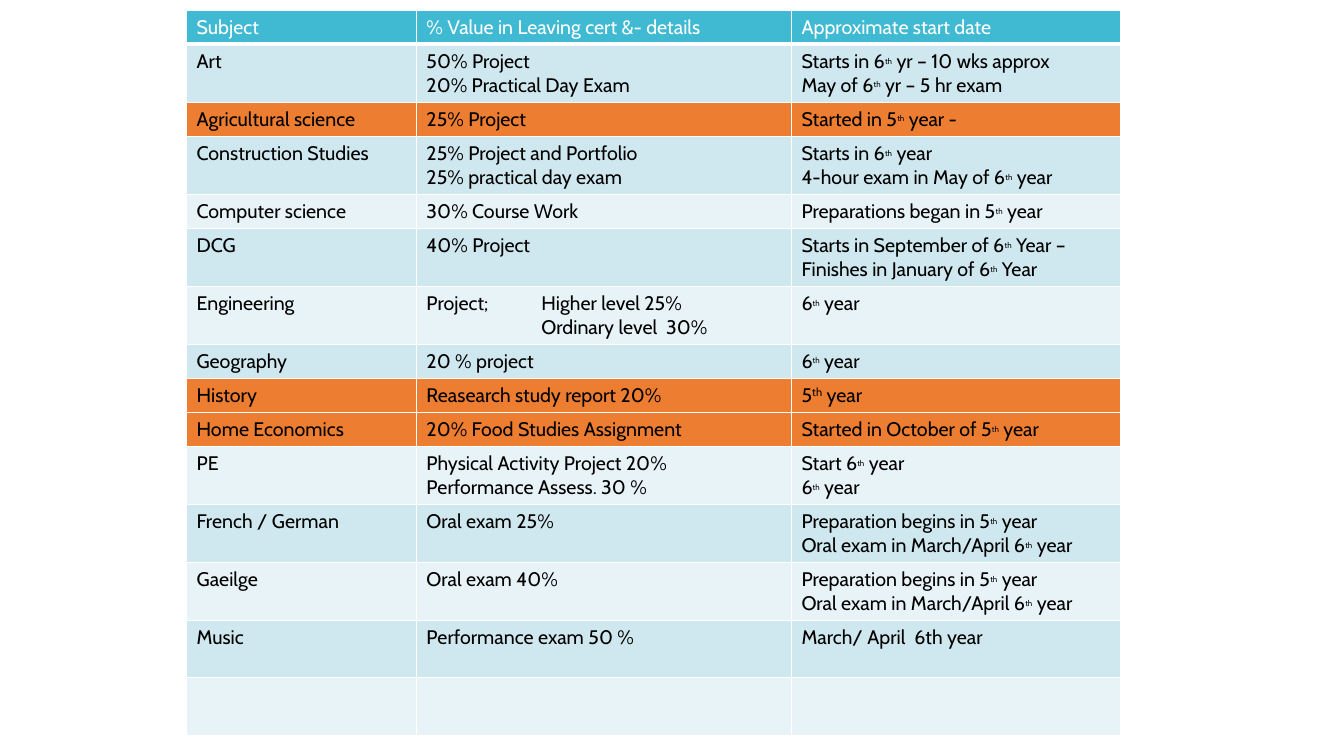
from lxml import etree
from pptx import Presentation
from pptx.dml.color import RGBColor
from pptx.oxml.ns import qn
from pptx.util import Inches, Pt

HEAD = ("Subject", "% Value in Leaving cert &- details", "Approximate start date")
ROWS = [
    (2, "", "Art", "50% Project\n20% Practical Day Exam",
     "Starts in 6^th^ yr – 10 wks approx\nMay of 6^th^ yr – 5 hr exam"),
    (1, "mark", "Agricultural science", "25% Project", "Started in 5^th^ year -"),
    (2, "", "Construction Studies", "25% Project and Portfolio\n25% practical day exam",
     "Starts in 6^th^ year\n4-hour exam in May of 6^th^ year"),
    (1, "", "Computer science", "30% Course Work", "Preparations began in 5^th^ year"),
    (2, "", "DCG", "40% Project",
     "Starts in September of 6^th^ Year – Finishes in January of 6^th^ Year"),
    (2, "", "Engineering", "Project;\tHigher level 25%\n\tOrdinary level  30%", "6^th^ year"),
    (1, "", "Geography", "20 % project", "6^th^ year"),
    (1, "mark", "History", "Reasearch study report 20%", "5^TH^ year"),
    (1, "mark", "Home Economics", "20% Food Studies Assignment",
     "Started in October of 5^th^ year"),
    (2, "", "PE", "Physical Activity Project 20%\nPerformance Assess. 30 %",
     "Start 6^th^ year\n6^th^ year"),
    (2, "", "French / German", "Oral exam 25%",
     "Preparation begins in 5^th^ year\nOral exam in March/April 6^th^ year"),
    (2, "", "Gaeilge", "Oral exam 40%",
     "Preparation begins in 5^th^ year\nOral exam in March/April 6^th^ year"),
    (2, "", "Music", "Performance exam 50 %", "March/ April  6th year"),
    (2, "", "", "", ""),
]
HEX = {"head": "40BAD2", "odd": "CFE7EE", "even": "E8F3F7", "mark": "ED7D31",
       "light": "FFFFFF", "dark": "000000"}
COLS = (2.28, 3.72, 3.26)
TALL = {1: 0.34, 2: 0.57}
LEFT, TOP = 1.85, 0.1
FONT, SIZE, SMALL = "Cabin", 14, 10
TAB = 1.14


def edge(cell, base):
    props = cell._tc.get_or_add_tcPr()
    for side in "LRTB":
        width = base if side == "B" else 1
        line = etree.SubElement(props, qn(f"a:ln{side}"), w=str(Pt(width)))
        fill = etree.SubElement(line, qn("a:solidFill"))
        etree.SubElement(fill, qn("a:srgbClr"), val=HEX["light"])


def add_tab(para):
    props = para._p.get_or_add_pPr()
    stops = etree.SubElement(props, qn("a:tabLst"))
    etree.SubElement(stops, qn("a:tab"), pos=str(Inches(TAB)), algn="l")


def write(cell, text, ink):
    frame = cell.text_frame
    for i, line in enumerate(text.split("\n")):
        para = frame.add_paragraph() if i else frame.paragraphs[0]
        if "\t" in line:
            add_tab(para)
        para.font.size = Pt(SIZE)
        para.font.name = FONT
        for j, part in enumerate(line.split("^")):
            if not part:
                continue
            run = para.add_run()
            run.text = part.lower() if j % 2 else part
            font = run.font
            font.name = FONT
            font.size = Pt(SMALL if part == "th" else SIZE)
            font.color.rgb = RGBColor.from_string(HEX[ink])
            if j % 2:
                run._r.get_or_add_rPr().set("baseline", "30000")


def main():
    deck = Presentation()
    deck.slide_width, deck.slide_height = Inches(13.33), Inches(7.5)
    slide = deck.slides.add_slide(deck.slide_layouts[6])
    rows = [(1, "head", *HEAD), *ROWS]
    high = sum(TALL[row[0]] for row in rows)
    table = slide.shapes.add_table(len(rows), len(COLS), Inches(LEFT), Inches(TOP),
                                   Inches(sum(COLS)), Inches(high)).table
    table.horz_banding = False
    for col, wide in zip(table.columns, COLS):
        col.width = Inches(wide)
    for r, (lines, tone, *texts) in enumerate(rows):
        table.rows[r].height = Inches(TALL[lines])
        tone = tone or ("odd" if r % 2 else "even")
        for c, text in enumerate(texts):
            cell = table.cell(r, c)
            edge(cell, 1 if r else 3)
            cell.fill.solid()
            cell.fill.fore_color.rgb = RGBColor.from_string(HEX[tone])
            write(cell, text, "dark" if r else "light")
    deck.save("out.pptx")


if __name__ == "__main__":
    main()
